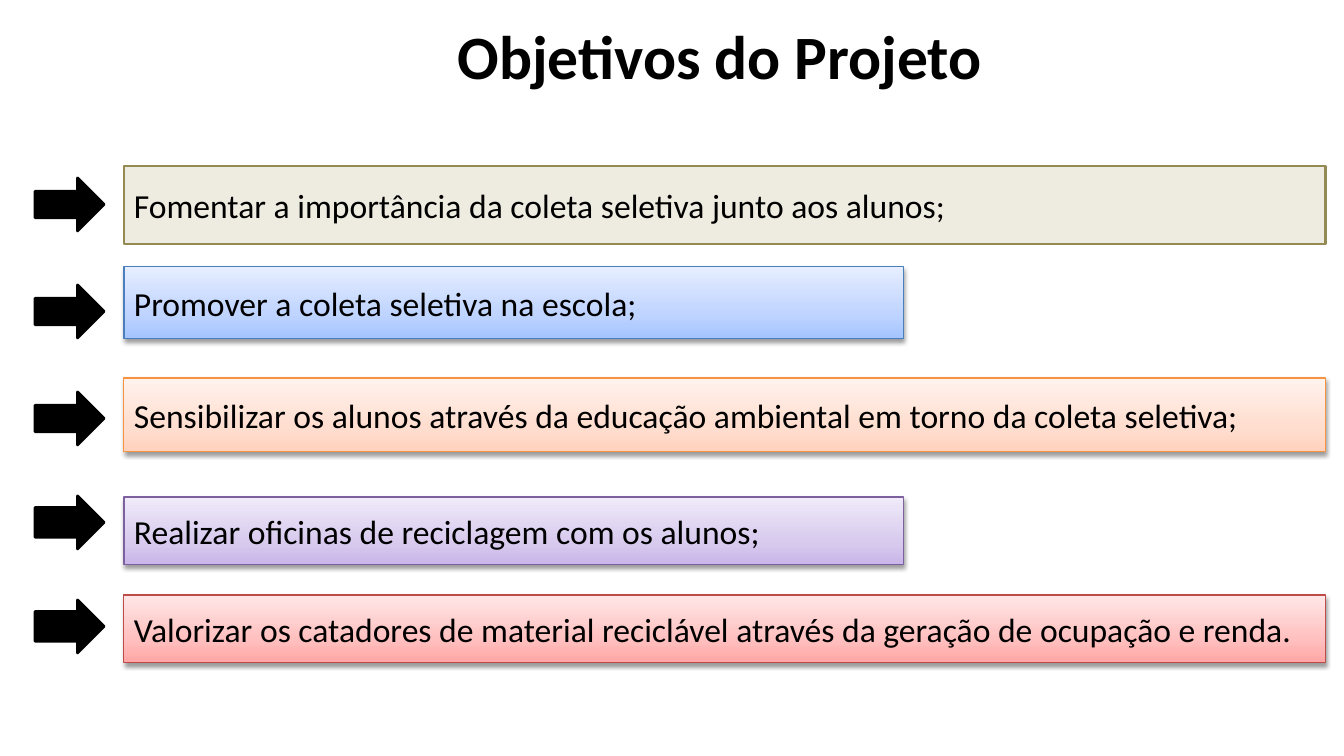
import copy

import lxml.etree
import pptx
import pptx.dml.color
import pptx.enum.shapes
import pptx.enum.text
import pptx.oxml.ns
import pptx.util

RGB = pptx.dml.color.RGBColor
KIND = pptx.enum.shapes.MSO_SHAPE
ALIGN = pptx.enum.text.PP_ALIGN
MIDDLE = pptx.enum.text.MSO_ANCHOR.MIDDLE
qn = pptx.oxml.ns.qn

BLACK = RGB(0x00, 0x00, 0x00)
CREAM = RGB(0xEE, 0xEC, 0xE1)
OLIVE = RGB(0x94, 0x8A, 0x54)
BLUE = RGB(0x4B, 0x7E, 0xBC)
ORANGE = RGB(0xF6, 0x92, 0x40)
PURPLE = RGB(0x7D, 0x60, 0xA0)
RED = RGB(0xBF, 0x4C, 0x48)
BLUES = [RGB(0xA4, 0xC4, 0xFF), RGB(0xBF, 0xD4, 0xFF), RGB(0xE6, 0xEE, 0xFF)]
PEACHES = [RGB(0xFF, 0xD2, 0xBD), RGB(0xFF, 0xDE, 0xD0), RGB(0xFF, 0xF2, 0xED)]
LILACS = [RGB(0xC9, 0xB5, 0xE8), RGB(0xD8, 0xCB, 0xEE), RGB(0xF0, 0xEA, 0xF9)]
PINKS = [RGB(0xFF, 0xA6, 0xA5), RGB(0xFF, 0xC0, 0xBF), RGB(0xFF, 0xE7, 0xE7)]

STOPS = [0, 0.35, 1]
WIDE, SHORT = 1202, 780
GOALS = [
    ("Fomentar a importância da coleta seletiva junto aos alunos;",
     166, WIDE, 78, [CREAM], OLIVE, 178, 0.5),
    ("Promover a coleta seletiva na escola;",
     267, SHORT, 72, BLUES, BLUE, 285, 0.5),
    ("Sensibilizar os alunos através da educação ambiental em torno da coleta seletiva;",
     378, WIDE, 74, PEACHES, ORANGE, 392, 0.5),
    ("Realizar oficinas de reciclagem com os alunos;",
     497, SHORT, 68, LILACS, PURPLE, 496, 0.56),
    ("Valorizar os catadores de material reciclável através da geração de ocupação e renda.",
     595, WIDE, 68, PINKS, RED, 600, 0.56),
]


class Board:
    """Holds the slide and its style, and draws each kind of element."""

    font = "Calibri"
    scale = 914400 / 100.8

    def __init__(self, deck):
        deck.slide_width, deck.slide_height = self.emu(1344, 756)
        self.slide = deck.slides.add_slide(deck.slide_layouts[6])

    def emu(self, *sizes):
        return [pptx.util.Emu(round(size * self.scale)) for size in sizes]

    def label(self, shape, text, size, align, bold=False):
        frame = shape.text_frame
        frame.word_wrap = True
        frame.vertical_anchor = MIDDLE
        frame.text = text
        line = frame.paragraphs[0]
        line.alignment = align
        font = line.runs[0].font
        font.name = self.font
        font.size = pptx.util.Pt(size)
        font.bold = bold
        font.color.rgb = BLACK

    def title(self, text, *box):
        shape = self.slide.shapes.add_textbox(*self.emu(*box))
        self.label(shape, text, 44, ALIGN.CENTER, True)

    def shape(self, kind, box, edge, weight):
        shape = self.slide.shapes.add_shape(kind, *self.emu(*box))
        shape.shadow.inherit = False
        shape.line.color.rgb = edge
        shape.line.width = pptx.util.Pt(weight)
        return shape

    def arrow(self, top, ratio):
        shape = self.shape(KIND.RIGHT_ARROW, (35, top, 69, 53), BLACK, 2)
        shape.adjustments[0] = ratio
        shape.fill.solid()
        shape.fill.fore_color.rgb = BLACK

    def blend(self, shape, tints):
        shape.fill.gradient()
        shape.fill.gradient_angle = 90
        stops = next(shape._element.spPr.iter(qn("a:gsLst")))
        stops.append(copy.deepcopy(stops[-1]))
        for stop, place, tint in zip(shape.fill.gradient_stops, STOPS, tints):
            stop.position = place
            stop.color.rgb = tint

    def shade(self, shape):
        effects = shape._element.spPr.find(qn("a:effectLst"))
        outer = lxml.etree.SubElement(
            effects, qn("a:outerShdw"), blurRad="40000", dist="20000",
            dir="5400000", rotWithShape="0")
        color = lxml.etree.SubElement(outer, qn("a:srgbClr"), val=str(BLACK))
        lxml.etree.SubElement(color, qn("a:alpha"), val="38000")

    def bar(self, text, top, width, height, tints, edge):
        plain = len(tints) == 1
        box = (124, top, width, height)
        shape = self.shape(KIND.RECTANGLE, box, edge, 2 if plain else 0.75)
        if plain:
            shape.fill.solid()
            shape.fill.fore_color.rgb = tints[0]
        else:
            self.blend(shape, tints)
            self.shade(shape)
        self.label(shape, text, 24, ALIGN.LEFT)


def main():
    deck = pptx.Presentation()
    board = Board(deck)
    board.title("Objetivos do Projeto", 173, 15, 1094, 80)
    for text, top, width, height, tints, edge, tip, ratio in GOALS:
        board.arrow(tip, ratio)
        board.bar(text, top, width, height, tints, edge)
    deck.save("out.pptx")


if __name__ == "__main__":
    main()
